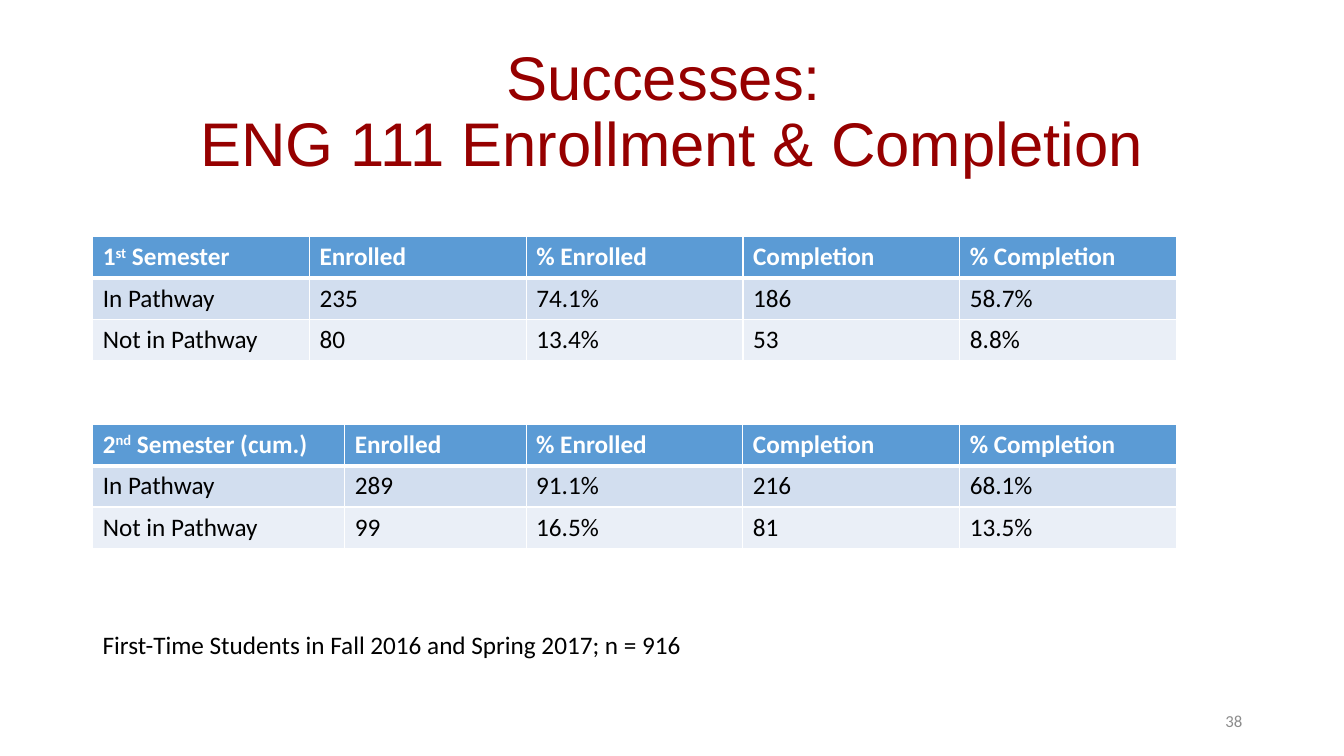
from dataclasses import dataclass

from lxml.etree import SubElement
from pptx import Presentation
from pptx.dml.color import RGBColor as Rgb
from pptx.enum.text import MSO_ANCHOR as Anchor, MSO_AUTO_SIZE as AutoSize, PP_ALIGN as Align
from pptx.oxml.ns import qn
from pptx.util import Inches, Pt


@dataclass(frozen=True)
class Theme:
    heading_font: str = "Arial"
    body_font: str = "Calibri"
    heading: str = "960000"
    text: str = "000000"
    muted: str = "8C8C8C"
    white: str = "FFFFFF"
    header_fill: str = "5B9BD5"
    bands: tuple = ("D2DEEF", "EAEFF7")
    heading_size: int = 44
    body_size: int = 18
    number_size: int = 12
    rule: int = 1
    header_rule: int = 3


class SlideBuilder:
    """Draws on one slide; every length is a percentage of the slide's size."""

    def __init__(self, deck, theme):
        self.deck, self.theme = deck, theme
        self.slide = deck.slides.add_slide(deck.slide_layouts[5])

    def x(self, share):
        return round(self.deck.slide_width * share / 100)

    def y(self, share):
        return round(self.deck.slide_height * share / 100)

    def box(self, left, top, width, height):
        return self.x(left), self.y(top), self.x(width), self.y(height)

    def style(self, paragraph, size, color, font=None, bold=False, align=Align.LEFT):
        paragraph.alignment = align
        paragraph.font.name = font or self.theme.body_font
        paragraph.font.size = Pt(size)
        paragraph.font.bold = bold
        paragraph.font.color.rgb = Rgb.from_string(color)

    def title(self, lines, *area):
        heading = self.slide.shapes.title
        heading.left, heading.top, heading.width, heading.height = self.box(*area)
        frame = heading.text_frame
        frame.auto_size = AutoSize.NONE
        frame.vertical_anchor = Anchor.MIDDLE
        paragraph = frame.paragraphs[0]
        for index, line in enumerate(lines):
            if index:
                paragraph.add_line_break()
            paragraph.add_run().text = line
        paragraph.line_spacing = 0.9
        self.style(paragraph, self.theme.heading_size, self.theme.heading,
                   self.theme.heading_font, align=Align.CENTER)

    def text(self, words, area, size, color, align=Align.LEFT, anchor=Anchor.TOP):
        frame = self.slide.shapes.add_textbox(*self.box(*area)).text_frame
        frame.word_wrap = True
        frame.vertical_anchor = anchor
        frame.paragraphs[0].text = words
        self.style(frame.paragraphs[0], size, color, align=align)

    def border(self, cell, side, points):
        line = SubElement(cell._tc.get_or_add_tcPr(), qn(f"a:ln{side}"), w=str(Pt(points)))
        fill = SubElement(line, qn("a:solidFill"))
        SubElement(fill, qn("a:srgbClr"), val=self.theme.white)

    def cell(self, cell, parts, row):
        theme, header = self.theme, row == 0
        paragraph = cell.text_frame.paragraphs[0]
        for index, part in enumerate(parts):
            run = paragraph.add_run()
            run.text = part
            if index == 1:  # the ordinal suffix is raised
                run.font._element.set("baseline", "30000")
        self.style(paragraph, theme.body_size, theme.white if header else theme.text, bold=header)
        # Borders come before the fill; the thick rule lies under the header
        for side in "LRTB":
            under_header = (row, side) in ((0, "B"), (1, "T"))
            self.border(cell, side, theme.header_rule if under_header else theme.rule)
        cell.fill.solid()
        cell.fill.fore_color.rgb = Rgb.from_string(
            theme.header_fill if header else theme.bands[(row - 1) % 2])

    def table(self, rows, left, top, widths, row_height):
        area = self.box(left, top, sum(widths), row_height * len(rows))
        grid = self.slide.shapes.add_table(len(rows), len(widths), *area).table
        for column, width in zip(grid.columns, widths):
            column.width = self.x(width)
        for r, values in enumerate(rows):
            grid.rows[r].height = self.y(row_height)
            for c, value in enumerate(values):
                parts = value if isinstance(value, tuple) else (value,)
                self.cell(grid.cell(r, c), parts, r)


LEFT, COLUMN, ROW = 6.9, 16.13, 5.47
MEASURES = ["Enrolled", "% Enrolled", "Completion", "% Completion"]
# Semester heading, table top, first two column widths, in and not in pathway
SEMESTERS = [
    (("1", "st", " Semester"), 31.33, [COLUMN, COLUMN],
     ["235", "74.1%", "186", "58.7%"], ["80", "13.4%", "53", "8.8%"]),
    (("2", "nd", " Semester (cum.)"), 56.13, [18.75, 13.5],
     ["289", "91.1%", "216", "68.1%"], ["99", "16.5%", "81", "13.5%"]),
]


def main():
    deck = Presentation()
    deck.slide_width, deck.slide_height = Inches(13.33), Inches(7.5)
    theme = Theme()
    page = SlideBuilder(deck, theme)

    # Title
    page.title(["Successes: ", "ENG 111 Enrollment & Completion"], LEFT, 5.33, 86.25, 19.33)

    # Semester tables
    for semester, top, first_widths, in_pathway, outside in SEMESTERS:
        rows = [[semester, *MEASURES], ["In Pathway", *in_pathway], ["Not in Pathway", *outside]]
        page.table(rows, LEFT, top, first_widths + [COLUMN] * 3, ROW)

    # Slide number and sample note
    page.text("38", (70.67, 92.67, 22.5, 5.33), theme.number_size, theme.muted,
              Align.RIGHT, Anchor.MIDDLE)
    page.text("First-Time Students in Fall 2016 and Spring 2017; n = 916",
              (LEFT, 82.53, 76.8, 5.33), theme.body_size, theme.text)

    deck.save("out.pptx")


if __name__ == "__main__":
    main()
